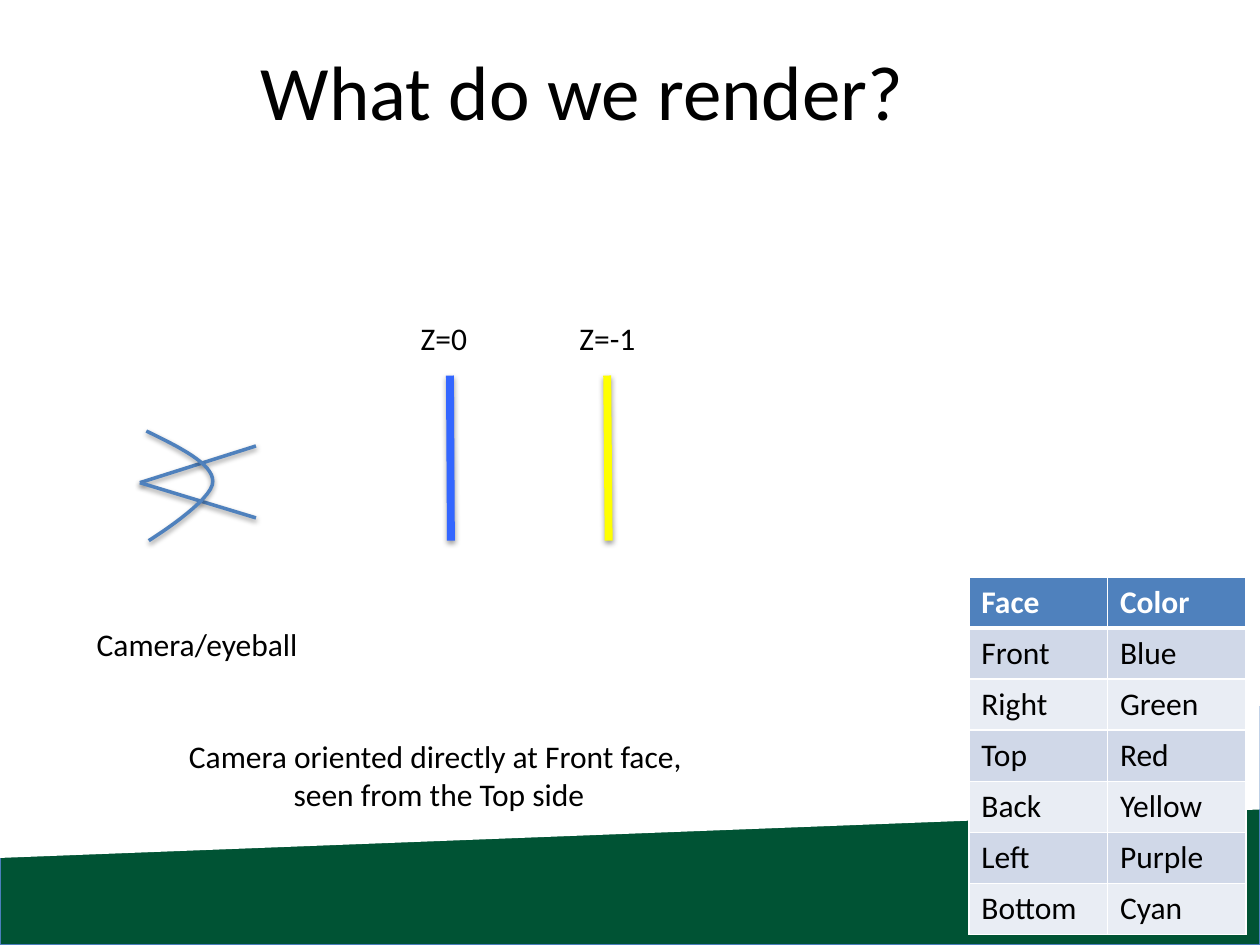
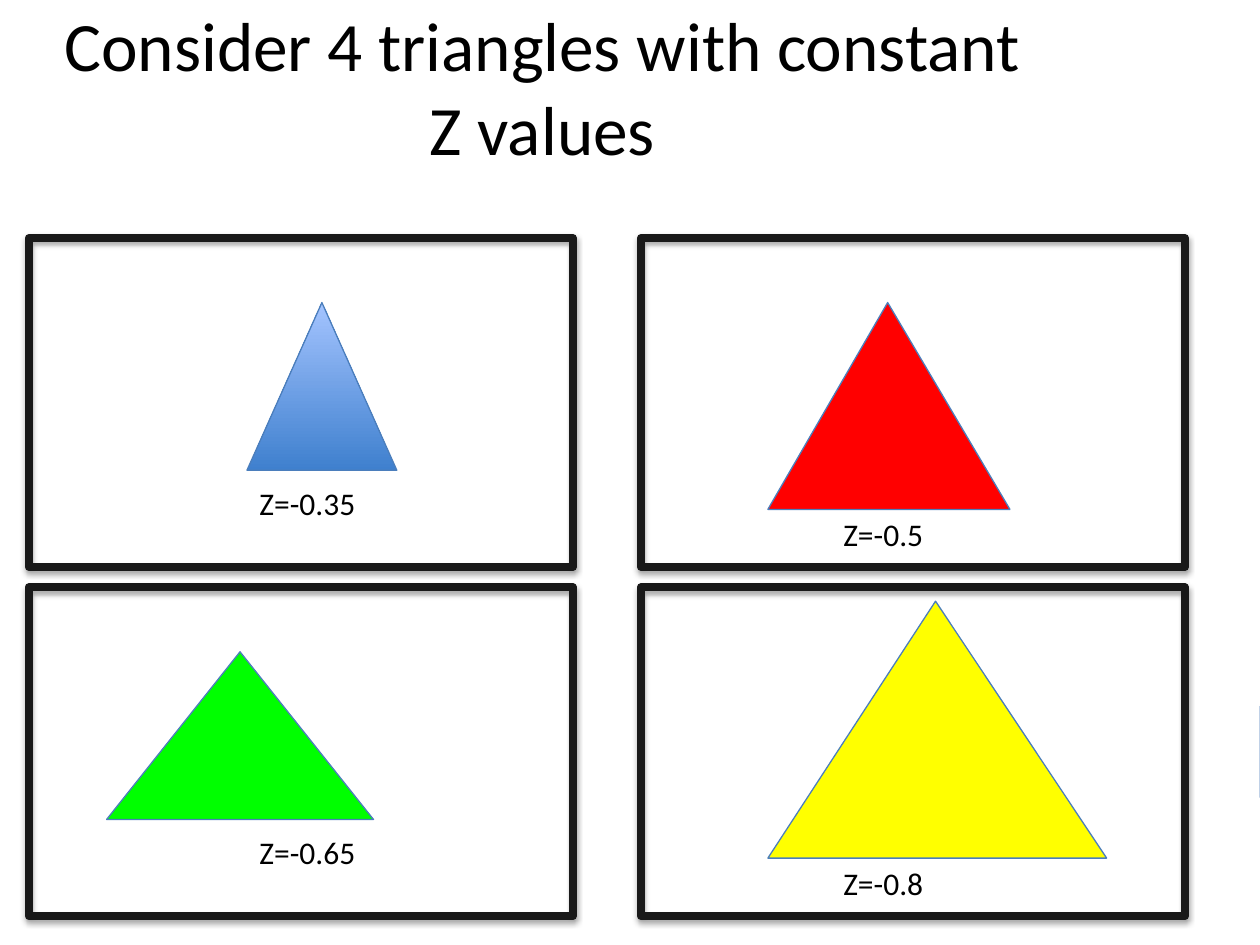
"""Build two slides on depth values and what gets rendered."""
from lxml.etree import SubElement as Sub
from pptx import Presentation
from pptx.dml.color import RGBColor as Rgb
from pptx.enum.shapes import MSO_CONNECTOR as Link, MSO_SHAPE as Form
from pptx.enum.text import MSO_ANCHOR as Anchor, MSO_AUTO_SIZE as Auto, PP_ALIGN as Align
from pptx.oxml.ns import qn
from pptx.util import Cm, Pt

HUES = {
    "ink": "000000", "white": "FFFFFF", "band": "005334", "edge": "4B7EBC",
    "head": "4F81BD", "odd": "D0D8E8", "even": "E9EDF4", "frame": "191919",
    "blue": "3366FF", "red": "FF0000", "lime": "00FF00", "yellow": "FFFF00",
    "deep": "3F80CE", "pale": "A4C4FF",
}
TITLE = {"name": "Calibri", "size": Pt(44)}
SMALL = {"name": "Calibri", "size": Pt(39.6)}
BODY = {"name": "Calibri", "size": Pt(18), "bold": False}
HEAD = {**BODY, "bold": True}
PAGE = (25.4, 19.05)

FACES = [
    ("Face", "Color"), ("Front", "Blue"), ("Right", "Green"), ("Top", "Red"),
    ("Back", "Yellow"), ("Left", "Purple"), ("Bottom", "Cyan"),
]
LABELS = [
    (["Camera/eyeball"], (1.7, 12.47, 5, 1.02), Align.LEFT),
    (["Camera oriented directly at Front face, ", "seen from the Top side"],
     (3.12, 14.73, 11.46, 1.8), Align.CENTER),
    (["Z=0"], (8.23, 6.3, 1.63, 1.02), Align.LEFT),
    (["Z=-1"], (11.43, 6.3, 1.85, 1.02), Align.LEFT),
]
RAYS = [
    ((2.82, 9.73), (5.16, 8.99), "head", 2),
    ((2.82, 9.73), (5.16, 10.44), "head", 2),
    ((9.07, 7.57), (9.09, 10.9), "blue", 4.5),
    ((12.24, 7.57), (12.27, 10.9), "yellow", 4.5),
]
LENS = [
    [(2.95, 8.69), (3.63, 9.02), (4.29, 9.35), (4.29, 9.7)],
    [(4.29, 9.7), (4.32, 10.08), (3, 10.9), (3, 10.9)],
]
CELLS = [
    ("Z=-0.35", ("deep", "pale"), (4.4, 1.3, 3.02, 3.38), 0.5),
    ("Z=-0.5", "red", (2.56, 1.3, 4.88, 4.17), 0.495),
    ("Z=-0.65", "lime", (1.57, 1.3, 5.38, 3.38), 0.5),
    ("Z=-0.8", "yellow", (2.56, 0.28, 6.83, 5.18), 0.495),
]
NOTES = [(4.4, 4.83, 2.74, 1.02), (3.83, 5.46, 2.39, 1.02)]
GRID = {"left": 0.58, "top": 4.8, "dx": 12.34, "dy": 7.04}
FRAME = (10.97, 6.63)


def hue(name):
    return Rgb.from_string(HUES[name])


def cms(vals):
    return [Cm(v) for v in vals]


def style(font, look, tint):
    for key, val in look.items():
        setattr(font, key, val)
    font.color.rgb = hue(tint)


def cast(shape, alpha, dist):
    props = shape.element.spPr
    fx = props.find(qn("a:effectLst"))
    if fx is None:
        fx = Sub(props, qn("a:effectLst"))
    dark = Sub(fx, qn("a:outerShdw"), blurRad=str(Pt(3.1)), dist=str(Pt(dist)),
               dir="5400000", rotWithShape="0")
    tone = Sub(dark, qn("a:srgbClr"), val=HUES["ink"])
    Sub(tone, qn("a:alpha"), val=str(alpha * 1000))


def pen(line, tint, width):
    line.color.rgb = hue(tint)
    line.width = Pt(width)


def draw(slide, kind, box, fill=None, edge=None, width=0.75, adj=None):
    shape = slide.shapes.add_shape(kind, *cms(box))
    shape.shadow.inherit = False
    if isinstance(fill, tuple):
        shape.fill.gradient()
        shape.fill.gradient_angle = 90
        for stop, tint in zip(shape.fill.gradient_stops, fill):
            stop.color.rgb = hue(tint)
    elif fill:
        shape.fill.solid()
        shape.fill.fore_color.rgb = hue(fill)
    else:
        shape.fill.background()
    if edge:
        pen(shape.line, edge, width)
    else:
        shape.line.fill.background()
    if adj is not None:
        shape.adjustments[0] = adj
    return shape


def write(slide, lines, box, look=BODY, align=Align.LEFT, wrap=False):
    frame = slide.shapes.add_textbox(*cms(box)).text_frame
    frame.word_wrap = wrap
    frame.auto_size = Auto.NONE if wrap else Auto.SHAPE_TO_FIT_TEXT
    frame.vertical_anchor = Anchor.MIDDLE if wrap else Anchor.TOP
    for i, line in enumerate(lines):
        para = frame.add_paragraph() if i else frame.paragraphs[0]
        para.alignment = align
        run = para.add_run()
        run.text = line
        style(run.font, look, "ink")


def start(deck, title, box, look, cover=False):
    slide = deck.slides.add_slide(deck.slide_layouts[6])
    band = draw(slide, Form.RECTANGLE, (0, 14.25, PAGE[0], 4.8), "band", "edge")
    cast(band, 35, 1.8)
    slope = draw(slide, Form.PARALLELOGRAM, (9.75, 1.65, 5.89, 25.4), "white", adj=0.166)
    slope.rotation = 90
    slope.element.spPr.xfrm.set("flipH", "1")
    if cover:
        draw(slide, Form.RECTANGLE, (0, 16.08, PAGE[0], 2.97), "white")
    write(slide, [title], box, look, Align.CENTER, True)
    return slide


def ray(slide, tail, tip, tint, width):
    line = slide.shapes.add_connector(Link.STRAIGHT, *cms(tail + tip))
    pen(line.line, tint, width)
    cast(line, 38, 1.6)


def bend(pts, t):
    s = 1 - t
    mix = (s**3, 3 * s * s * t, 3 * s * t * t, t**3)
    return tuple(Cm(sum(m * p[k] for m, p in zip(mix, pts))) for k in (0, 1))


def lens(slide, steps=16):
    dots = [bend(arc, i / steps) for arc in LENS for i in range(1, steps + 1)]
    path = slide.shapes.build_freeform(*cms(LENS[0][0]), scale=1.0)
    path.add_line_segments(dots, close=False)
    shape = path.convert_to_shape()
    shape.shadow.inherit = False
    shape.fill.background()
    pen(shape.line, "head", 2)
    cast(shape, 38, 1.6)


def rule(cell, row):
    props = cell._tc.get_or_add_tcPr()
    for side in "LRTB":
        thick = (row, side) in ((0, "B"), (1, "T"))
        line = Sub(props, qn(f"a:ln{side}"), w=str(Pt(3 if thick else 1)))
        fill = Sub(line, qn("a:solidFill"))
        Sub(fill, qn("a:srgbClr"), val=HUES["white"])


def chart(slide):
    rows, cols = len(FACES), len(FACES[0])
    box = cms((19.53, 11.63, 5.59, 1.03 * rows))
    table = slide.shapes.add_table(rows, cols, *box).table
    for r, words in enumerate(FACES):
        table.rows[r].height = Cm(1.03)
        for c, word in enumerate(words):
            cell = table.cell(r, c)
            rule(cell, r)
            cell.fill.solid()
            cell.fill.fore_color.rgb = hue("head" if r == 0 else ("even", "odd")[r % 2])
            run = cell.text_frame.paragraphs[0].add_run()
            run.text = word
            style(run.font, BODY if r else HEAD, "ink" if r else "white")


def render(deck):
    slide = start(deck, "What do we render?", (0.41, 0.43, 22.66, 2.74), TITLE)
    for item in RAYS:
        ray(slide, *item)
    lens(slide)
    for lines, box, align in LABELS:
        write(slide, lines, box, align=align)
    chart(slide)


def depths(deck):
    slide = start(deck, "Consider 4 triangles with constant Z values",
                  (0.84, 0.36, 20.19, 2.74), SMALL, True)
    for i, (word, fill, tri, adj) in enumerate(CELLS):
        row, col = divmod(i, 2)
        x = GRID["left"] + col * GRID["dx"]
        y = GRID["top"] + row * GRID["dy"]
        frame = draw(slide, Form.RECTANGLE, (x, y, *FRAME), None, "frame", 4.5)
        cast(frame, 35, 1.8)
        left, top, *size = tri
        draw(slide, Form.ISOSCELES_TRIANGLE, (x + left, y + top, *size), fill, "edge", adj=adj)
        left, top, *size = NOTES[col]
        write(slide, [word], (x + left, y + top, *size))


def main():
    deck = Presentation()
    deck.slide_width, deck.slide_height = cms(PAGE)
    render(deck)
    depths(deck)
    deck.save("out.pptx")


if __name__ == "__main__":
    main()
